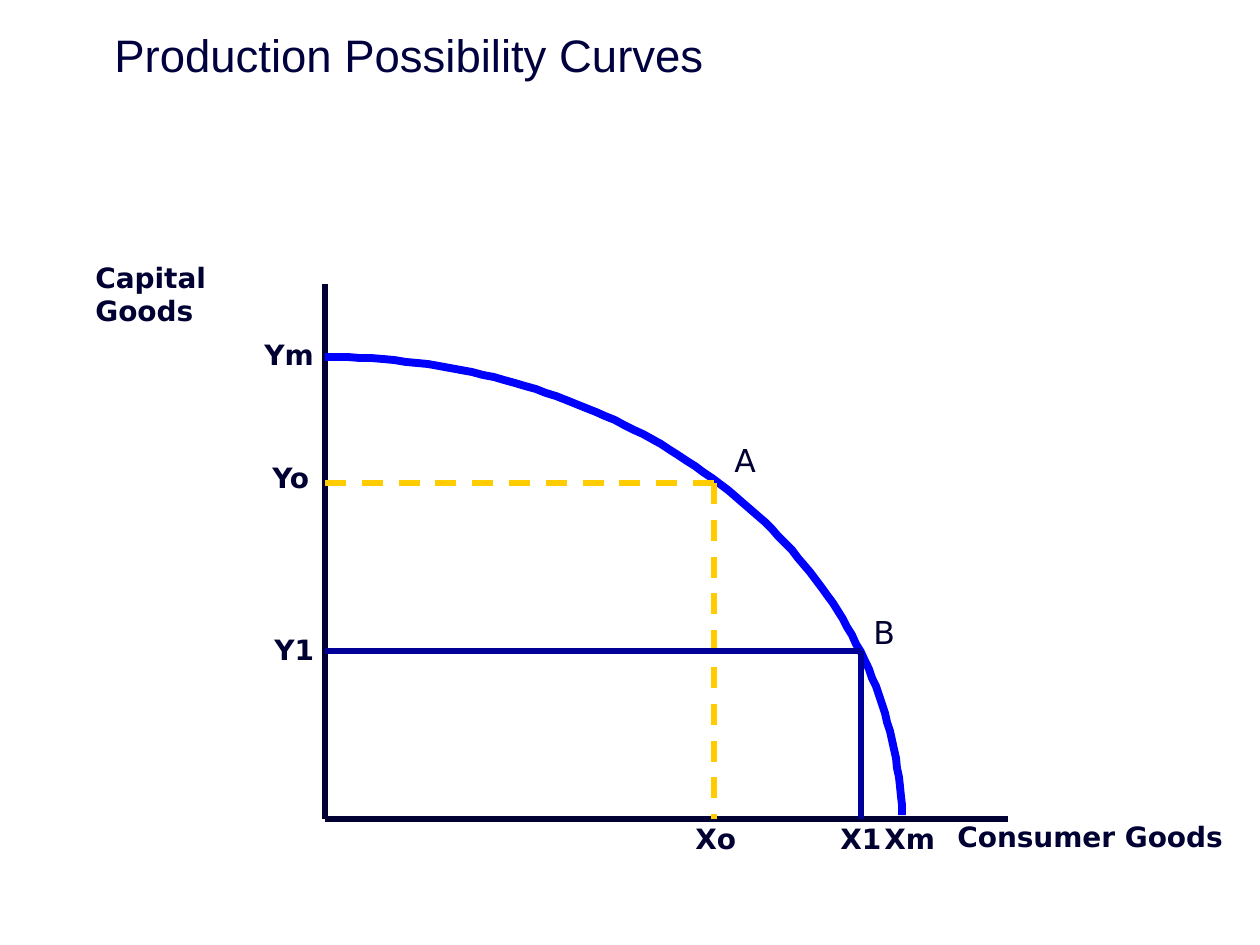
from lxml import etree
from pptx import Presentation
from pptx.dml.color import RGBColor
from pptx.enum.dml import MSO_LINE
from pptx.enum.shapes import MSO_CONNECTOR
from pptx.enum.text import MSO_ANCHOR
from pptx.oxml.ns import qn
from pptx.util import Pt

SCALE = 914400 / 126  # EMU per px
INK, BLUE, GOLD, NAVY = "000032", "0000FF", "FFCC00", "000099"
LABEL = {"name": "DejaVu Sans", "size": Pt(16), "bold": True}
POINT = {"name": "DejaVu Sans", "size": Pt(18), "bold": False}
TITLE = {"name": "Arial", "size": Pt(26), "bold": False}

ORIGIN_X, ORIGIN_Y = 325, 819
CURVE = [(325, 357), (638, 357), (893, 559), (902, 815)]  # Bezier controls


def px(value):
    return round(value * SCALE)


def color(hex_text):
    return RGBColor.from_string(hex_text)


def add_line(page, start, end, hex_text, dash=None):
    line = page.shapes.add_connector(
        MSO_CONNECTOR.STRAIGHT, *(px(v) for v in (*start, *end)))
    line.line.color.rgb = color(hex_text)
    line.line.width = Pt(3)
    if dash:
        line.line.dash_style = dash
    properties = line._element.spPr
    etree.SubElement(properties, qn("a:effectLst"))


def add_text(page, text, area, formats, hex_text=INK, wrap=False,
             anchor=MSO_ANCHOR.TOP):
    box = page.shapes.add_textbox(*(px(v) for v in area))
    frame = box.text_frame
    frame.word_wrap = wrap
    frame.vertical_anchor = anchor
    span = frame.paragraphs[0].add_run()
    span.text = text
    for name, value in formats.items():
        setattr(span.font, name, value)
    span.font.color.rgb = color(hex_text)


def bezier(t, controls):
    weights = ((1 - t) ** 3, 3 * t * (1 - t) ** 2, 3 * t * t * (1 - t), t ** 3)
    return tuple(sum(w * p[axis] for w, p in zip(weights, controls))
                 for axis in (0, 1))


def add_curve(page, controls, hex_text, steps=80):
    points = [bezier(i / steps, controls) for i in range(steps + 1)]
    builder = page.shapes.build_freeform(*points[0], scale=SCALE)
    builder.add_line_segments(points[1:], close=False)
    curve = builder.convert_to_shape()
    curve.shadow.inherit = False
    curve.fill.background()
    curve.line.color.rgb = color(hex_text)
    curve.line.width = Pt(4.5)


def add_guides(page, x, y, hex_text, dash=None):
    """Join a point on the curve to both axes."""
    add_line(page, (ORIGIN_X, y), (x, y), hex_text, dash)
    add_line(page, (x, y), (x, ORIGIN_Y), hex_text, dash)


def main():
    deck = Presentation()
    deck.slide_width, deck.slide_height = px(1260), px(945)
    page = deck.slides.add_slide(deck.slide_layouts[6])

    # Axes and frontier
    add_line(page, (ORIGIN_X, 284), (ORIGIN_X, ORIGIN_Y), INK)
    add_line(page, (ORIGIN_X, ORIGIN_Y), (1008, ORIGIN_Y), INK)
    add_curve(page, CURVE, BLUE)

    # Points A and B
    add_guides(page, 714, 483, GOLD, MSO_LINE.DASH)
    add_guides(page, 861, 651, NAVY)
    for text, left, top in (("A", 722, 435), ("B", 861, 607)):
        add_text(page, text, (left, top, 54, 63), POINT)

    # Axis names
    add_text(page, "Capital Goods", (83, 254, 200, 80), LABEL, wrap=True)
    add_text(page, "Consumer Goods", (945, 813, 291, 47), LABEL)

    # Axis values
    for text, left, top, width in (
            ("Ym", 252, 331, 76), ("Yo", 260, 454, 66), ("Y1", 262, 626, 66),
            ("Xo", 683, 815, 66), ("X1", 828, 815, 66), ("Xm", 872, 815, 76)):
        add_text(page, text, (left, top, width, 47), LABEL)

    # Title
    add_text(page, "Production Possibility Curves", (102, 22, 1134, 64),
             TITLE, "00003E", wrap=True, anchor=MSO_ANCHOR.MIDDLE)

    deck.save("out.pptx")


if __name__ == "__main__":
    main()
